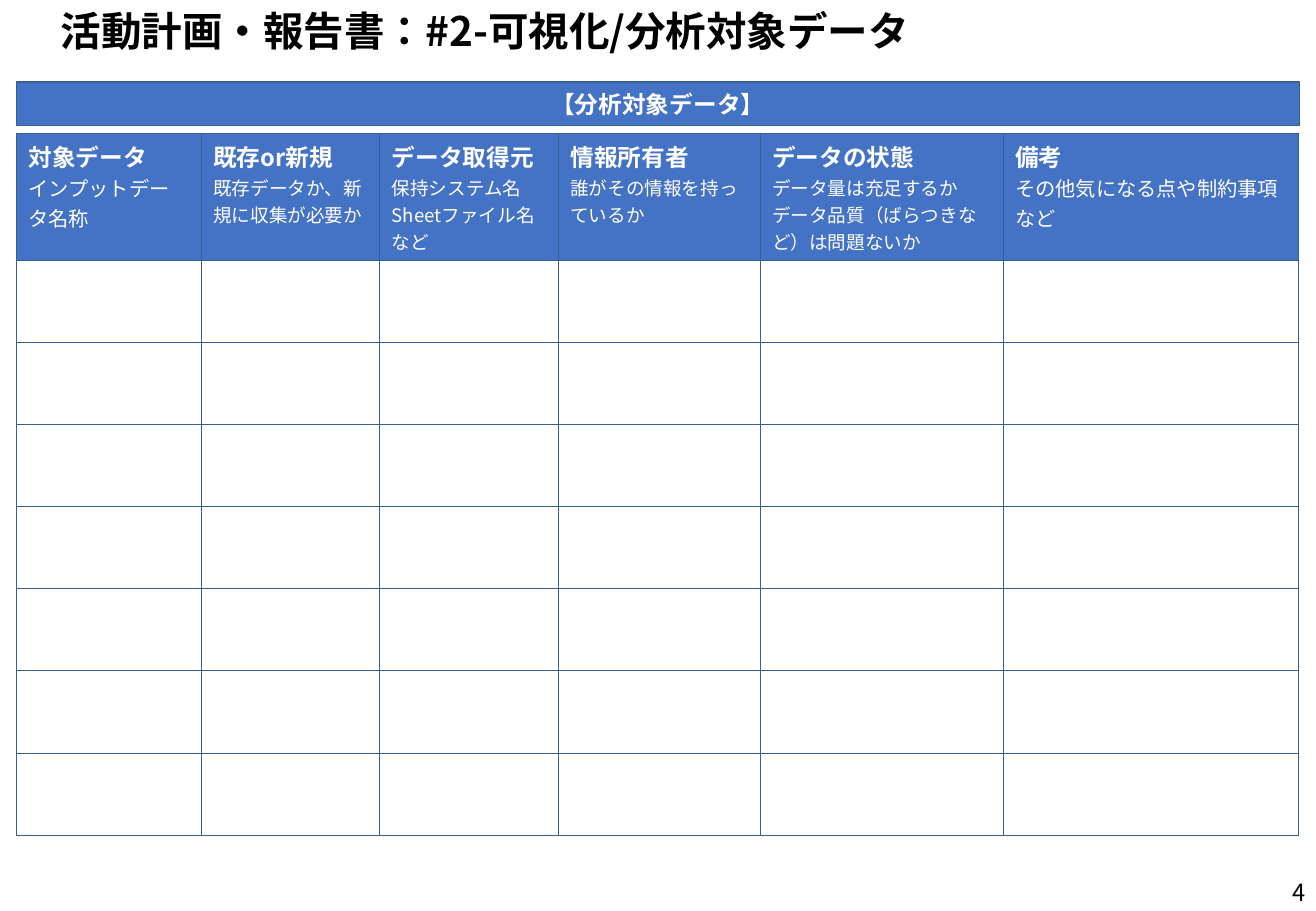
from dataclasses import dataclass

from lxml import etree
from pptx import Presentation
from pptx import util as u
from pptx.dml.color import RGBColor
from pptx.enum import lang, shapes, text
from pptx.oxml import ns

GRID_COLS, GRID_ROWS = 1083, 750
UNIT = u.Inches(0.01)


@dataclass(frozen=True)
class Theme:
    font: str = "Noto Sans CJK JP"
    ink: str = "000000"
    paper: str = "FFFFFF"
    blue: str = "4472C4"
    rule: str = "376092"
    title: int = 24
    heading: int = 14
    note: int = 12
    small_note: int = 11
    border: float = 0.75
    cell_border: float = 0.5


THEME = Theme()

# Column width, heading, note lines, note size
COLUMNS = [
    (152, "対象データ", ["インプットデータ名称"], THEME.note),
    (147, "既存or新規", ["既存データか、新規に収集が必要か"], THEME.small_note),
    (147, "データ取得元", ["保持システム名", "Sheetファイル名など"], THEME.small_note),
    (166, "情報所有者", ["誰がその情報を持っているか"], THEME.small_note),
    (200, "データの状態",
     ["データ量は充足するか", "データ品質（ばらつきなど）は問題ないか"], THEME.small_note),
    (243, "備考", ["その他気になる点や制約事項など"], THEME.note),
]
HEADER_HEIGHT, ENTRY_ROWS = 105, 7


def place(box):
    """Turn a box in grid units into slide lengths."""
    return [int(UNIT * n) for n in box]


def add_run(p, words, size, color, bold=False):
    r = p.add_run()
    r.text = words
    style = {"name": THEME.font, "size": u.Pt(size), "bold": bold,
             "language_id": lang.MSO_LANGUAGE_ID.JAPANESE}
    for key, value in style.items():
        setattr(r.font, key, value)
    r.font.color.rgb = RGBColor.from_string(color)
    etree.SubElement(r.font._element, ns.qn("a:ea"), typeface=THEME.font)


def write_line(sp, words, size, color, align, bold=False):
    tf = sp.text_frame
    tf.word_wrap = True
    tf.vertical_anchor = text.MSO_ANCHOR.MIDDLE
    p = tf.paragraphs[0]
    p.alignment = align
    add_run(p, words, size, color, bold)


def add_label(slide, box, words, size, align, bold=False):
    sp = slide.shapes.add_textbox(*place(box))
    write_line(sp, words, size, THEME.ink, align, bold)


def add_banner(slide, box, words):
    sp = slide.shapes.add_shape(shapes.MSO_SHAPE.RECTANGLE, *place(box))
    sp.shadow.inherit = False
    sp.fill.solid()
    sp.fill.fore_color.rgb = RGBColor.from_string(THEME.blue)
    sp.line.color.rgb = RGBColor.from_string(THEME.rule)
    sp.line.width = u.Pt(THEME.border)
    write_line(sp, words, THEME.heading, THEME.paper, text.PP_ALIGN.CENTER, True)


def add_borders(cell):
    props = cell._tc.get_or_add_tcPr()
    for i, side in enumerate(("lnL", "lnR", "lnT", "lnB")):
        ln = etree.Element(ns.qn(f"a:{side}"), w=str(u.Pt(THEME.cell_border)))
        fill = etree.SubElement(ln, ns.qn("a:solidFill"))
        etree.SubElement(fill, ns.qn("a:srgbClr"), val=THEME.rule)
        props.insert(i, ln)


def write_header(cell, heading, notes, note_size):
    cell.fill.solid()
    cell.fill.fore_color.rgb = RGBColor.from_string(THEME.blue)
    p = cell.text_frame.paragraphs[0]
    add_run(p, heading, THEME.heading, THEME.paper, True)
    for note in notes:
        p.add_line_break()
        add_run(p, note, note_size, THEME.paper)


def add_data_table(slide, box):
    """Place the header row and share the rest of the box among the entry rows."""
    frame = slide.shapes.add_table(ENTRY_ROWS + 1, len(COLUMNS), *place(box))
    table = frame.table
    table.first_row = table.horz_banding = False
    for row in table.rows:
        row.height = int(UNIT * (box[3] - HEADER_HEIGHT) / ENTRY_ROWS)
    table.rows[0].height = UNIT * HEADER_HEIGHT
    for cell in table.iter_cells():
        cell.fill.background()
        add_borders(cell)
    for i, (width, *header) in enumerate(COLUMNS):
        table.columns[i].width = UNIT * width
        write_header(table.cell(0, i), *header)


def build_plan_slide(prs):
    slide = prs.slides.add_slide(prs.slide_layouts[6])
    add_label(slide, (832, 714, 252, 40), "4", THEME.heading, text.PP_ALIGN.RIGHT)
    add_label(slide, (7, 0, 1070, 50), "　活動計画・報告書：#2-可視化/分析対象データ",
              THEME.title, text.PP_ALIGN.LEFT, True)
    add_banner(slide, (13.5, 67.5, 1056, 36), "【分析対象データ】")
    add_data_table(slide, (13.5, 109.5, 1055, 578))


def main():
    prs = Presentation()
    prs.slide_width, prs.slide_height = UNIT * GRID_COLS, UNIT * GRID_ROWS
    build_plan_slide(prs)
    prs.save("out.pptx")


if __name__ == "__main__":
    main()
